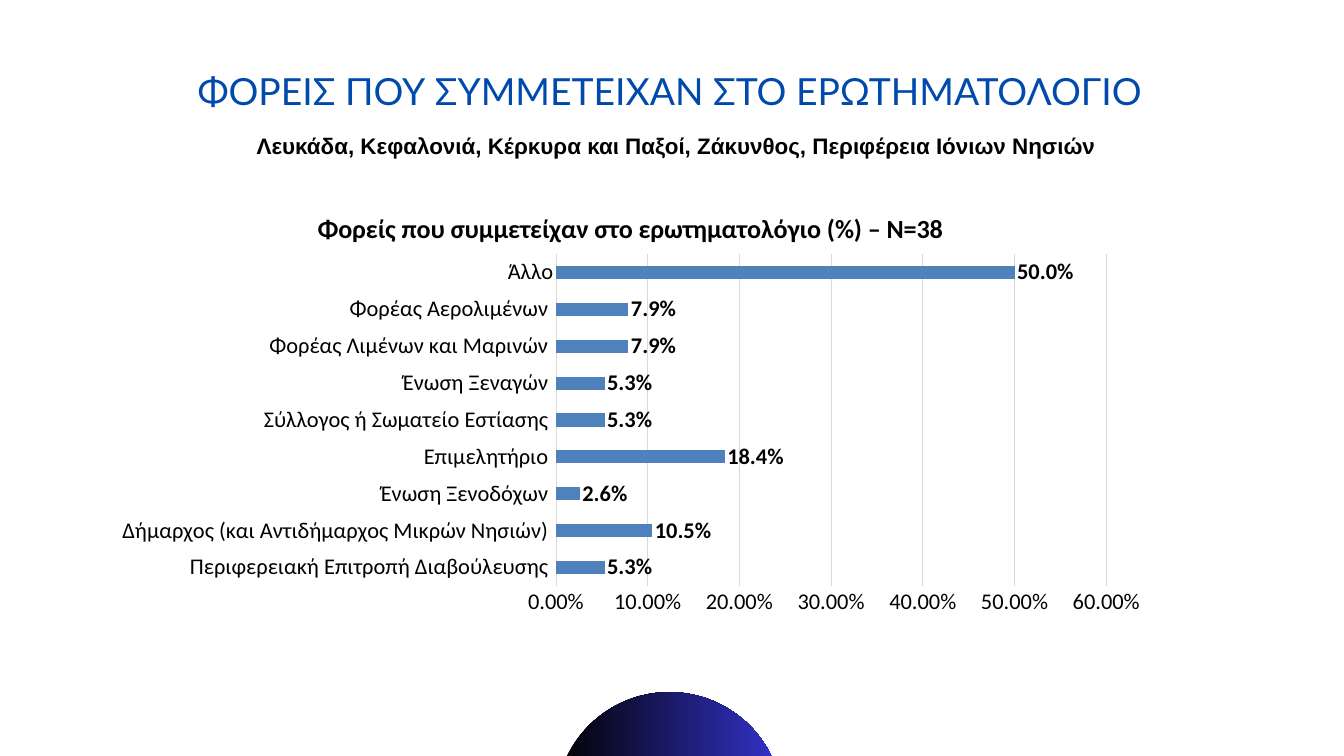
from typing import NamedTuple

from lxml import etree
from pptx import Presentation
from pptx import util as u
from pptx.chart import data as chart_data
from pptx.dml.color import RGBColor
from pptx.enum import chart as charts, shapes, text
from pptx.oxml import ns


class Area(NamedTuple):
    left: float
    top: float
    width: float
    height: float


class Style(NamedTuple):
    face: str
    size: float
    color: str = "000000"
    bold: bool = False


class Share(NamedTuple):
    body: str
    value: float


GRID_COLOR = "D9D9D9"
BAR_COLOR = "4F81BD"
HEADING = Style("Lato", 40, "004AAD")
REGIONS = Style("Arial", 24, bold=True)
AXIS = Style("Calibri", 24)
VALUE = Style("Calibri", 24, bold=True)
CHART_TITLE = Style("Calibri", 28, bold=True)
PLOT = Area(0.43, 0.14, 0.52, 0.77)

SHARES = [
    Share("Περιφερειακή Επιτροπή Διαβούλευσης ", 0.053),
    Share("Δήμαρχος (και Αντιδήμαρχος Μικρών Νησιών) ", 0.105),
    Share("Ένωση Ξενοδόχων ", 0.026),
    Share("Επιμελητήριο ", 0.184),
    Share("Σύλλογος ή Σωματείο Εστίασης ", 0.053),
    Share("Ένωση Ξεναγών ", 0.053),
    Share("Φορέας Λιμένων και Μαρινών ", 0.079),
    Share("Φορέας Αερολιμένων ", 0.079),
    Share("Άλλο", 0.5),
]


def rgb(value: str) -> RGBColor:
    return RGBColor.from_string(value)


def lengths(area: Area) -> list:
    return [u.Inches(side) for side in area]


def apply_style(font, style: Style) -> None:
    font.name = style.face
    font.size = u.Pt(style.size)
    font.bold = style.bold
    font.color.rgb = rgb(style.color)


def write_line(frame, words: str, style: Style):
    para = frame.paragraphs[0]
    para.alignment = text.PP_ALIGN.CENTER
    span = para.add_run()
    span.text = words
    apply_style(span.font, style)
    return para


def fill_placeholder(box, area: Area, words: str, style: Style, anchor):
    box.left, box.top, box.width, box.height = lengths(area)
    frame = box.text_frame
    frame.word_wrap = True
    frame.auto_size = text.MSO_AUTO_SIZE.NONE
    frame.vertical_anchor = anchor
    return write_line(frame, words, style)


def remove_bullet(para, margin: float) -> None:
    para.space_before = u.Pt(0)
    properties = para._p.get_or_add_pPr()
    properties.set("marL", str(u.Inches(margin)))
    properties.set("indent", "0")
    etree.SubElement(properties, ns.qn("a:buNone"))


def place_plot(chart, area: Area) -> None:
    plot_area = chart._chartSpace.chart.plotArea
    for old in plot_area.findall(ns.qn("c:layout")):
        plot_area.remove(old)
    layout = etree.Element(ns.qn("c:layout"))
    manual = etree.SubElement(layout, ns.qn("c:manualLayout"))
    settings = {"layoutTarget": "inner", "xMode": "edge", "yMode": "edge",
                "x": area.left, "y": area.top, "w": area.width, "h": area.height}
    for name, value in settings.items():
        etree.SubElement(manual, ns.qn(f"c:{name}")).set("val", str(value))
    plot_area.insert(0, layout)


def format_axis(axis) -> None:
    axis.major_tick_mark = axis.minor_tick_mark = charts.XL_TICK_MARK.NONE
    apply_style(axis.tick_labels.font, AXIS)


def draw_line(line) -> None:
    line.color.rgb = rgb(GRID_COLOR)
    line.width = u.Pt(0.75)


def add_share_chart(page, area: Area, title: str, shares: list[Share]) -> None:
    source = chart_data.CategoryChartData(number_format="0.00%")
    source.categories = [share.body for share in shares]
    source.add_series("Series 1", [share.value for share in shares])
    chart = page.shapes.add_chart(
        charts.XL_CHART_TYPE.BAR_CLUSTERED, *lengths(area), source).chart
    apply_style(chart.font, AXIS)
    chart.has_legend = False
    chart.has_title = True
    write_line(chart.chart_title.text_frame, title, CHART_TITLE)
    chart.chart_title.include_in_layout = False
    place_plot(chart, PLOT)

    format_axis(chart.category_axis)
    draw_line(chart.category_axis.format.line)
    values = chart.value_axis
    format_axis(values)
    values.minimum_scale, values.maximum_scale, values.major_unit = 0, 0.6, 0.1
    values.format.line.fill.background()
    values.tick_labels.number_format = "0.00%"
    values.tick_labels.number_format_is_linked = False
    values.has_major_gridlines = True
    draw_line(values.major_gridlines.format.line)

    plot = chart.plots[0]
    plot.vary_by_categories = False
    plot.gap_width = 182
    bars = plot.series[0]
    bars.format.fill.solid()
    bars.format.fill.fore_color.rgb = rgb(BAR_COLOR)
    labels = bars.data_labels
    labels.show_value = True
    labels.position = charts.XL_LABEL_POSITION.OUTSIDE_END
    labels.number_format = "0.0%"
    labels.number_format_is_linked = False
    apply_style(labels.font, VALUE)


def add_gradient_circle(page, area: Area, colors: tuple[str, str]) -> None:
    circle = page.shapes.add_shape(shapes.MSO_SHAPE.OVAL, *lengths(area))
    circle.shadow.inherit = False
    circle.line.fill.background()
    circle.fill.gradient()
    circle.fill.gradient_angle = 0
    for stop, color, position in zip(circle.fill.gradient_stops, colors, (0, 1)):
        stop.color.rgb = rgb(color)
        stop.position = position


def main() -> None:
    deck = Presentation()
    deck.slide_width, deck.slide_height = u.Inches(20), u.Inches(11.25)
    page = deck.slides.add_slide(deck.slide_layouts[1])
    fill_placeholder(page.shapes.title, Area(0.91, 0.72, 18.11, 1.25),
                     "ΦΟΡΕΙΣ ΠΟΥ ΣΥΜΜΕΤΕΙΧΑΝ ΣΤΟ ΕΡΩΤΗΜΑΤΟΛΟΓΙΟ",
                     HEADING, text.MSO_ANCHOR.MIDDLE)
    regions = fill_placeholder(
        page.placeholders[1], Area(0.27, 1.91, 19.42, 7.42),
        "Λευκάδα, Κεφαλονιά, Κέρκυρα και Παξοί, Ζάκυνθος, Περιφέρεια Ιόνιων Νησιών",
        REGIONS, text.MSO_ANCHOR.TOP)
    remove_bullet(regions, 0.16)
    add_share_chart(page, Area(1.5, 2.88, 15.75, 6.42),
                    "Φορείς που συμμετείχαν στο ερωτηματολόγιο (%) – N=38", SHARES)
    add_gradient_circle(page, Area(8.27, 10.3, 3.38, 3.38), ("000000", "3533CD"))
    deck.save("out.pptx")


if __name__ == "__main__":
    main()
